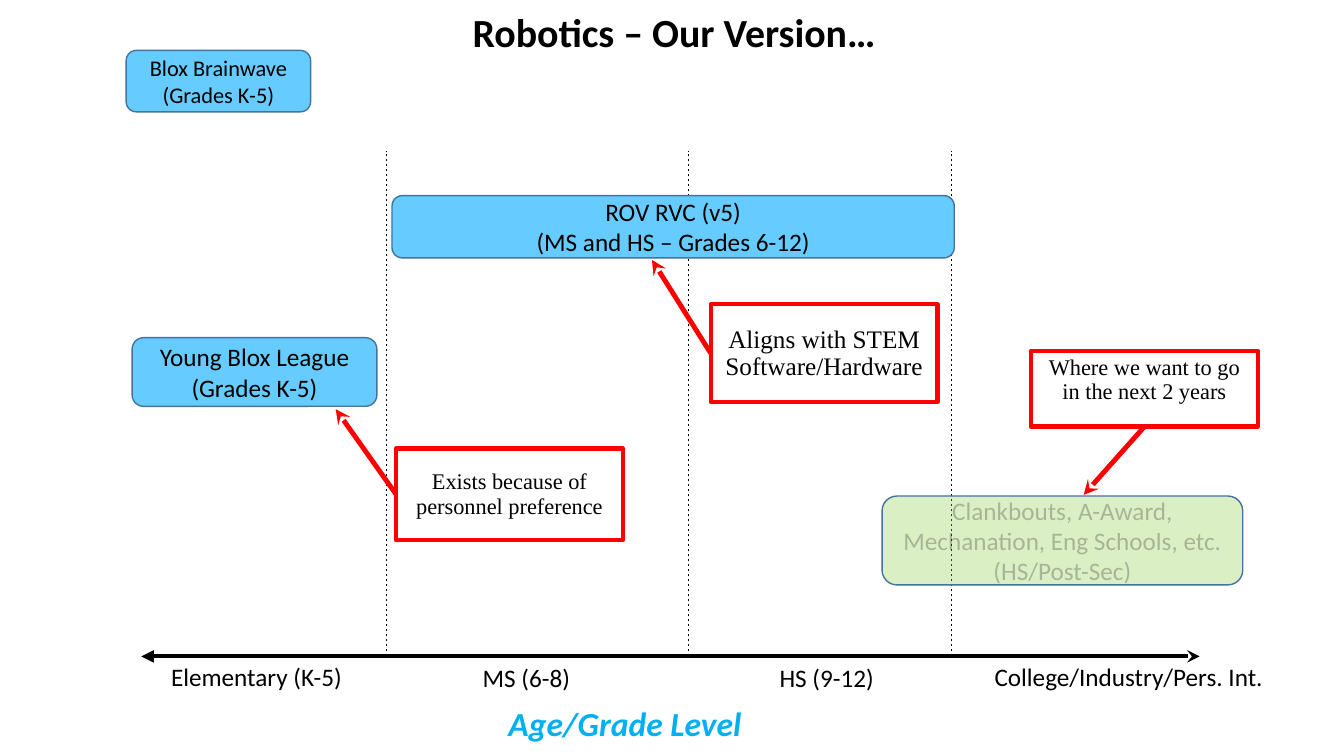
"""Build a slide placing robotics programs along an age and grade axis."""
from lxml.etree import SubElement
from pptx import Presentation
from pptx.dml.color import RGBColor
from pptx.enum.dml import MSO_LINE
from pptx.enum.shapes import MSO_CONNECTOR, MSO_SHAPE
from pptx.enum.text import MSO_ANCHOR as Anchor, PP_ALIGN
from pptx.oxml.ns import qn
from pptx.util import Cm, Pt

BLACK = RGBColor(0x00, 0x00, 0x00)
SKY = RGBColor(0x66, 0xCC, 0xFF)
GREEN = RGBColor(0x92, 0xD0, 0x50)
OUTLINE = RGBColor(0x43, 0x73, 0x9E)
RED = RGBColor(0xFF, 0x00, 0x00)
CYAN = RGBColor(0x00, 0xB0, 0xF0)


def write(shape, text, size, font="Calibri", color=BLACK, bold=False,
          italic=False, anchor=Anchor.TOP, spacing=1.0):
    """Put centred, formatted text in a shape."""
    frame = shape.text_frame
    frame.text = text
    frame.word_wrap = True
    frame.vertical_anchor = anchor
    for para in frame.paragraphs:
        para.alignment = PP_ALIGN.CENTER
        para.line_spacing = spacing
        for span in para.runs:
            span.font.name = font
            span.font.size = Pt(size)
            span.font.bold = bold
            span.font.italic = italic
            span.font.color.rgb = color


def draw_line(start, end, color, width, **arrowheads):
    """Draw a straight line with optional headEnd and tailEnd arrowheads."""
    line = page.shapes.add_connector(
        MSO_CONNECTOR.STRAIGHT, *map(Cm, start), *map(Cm, end))
    line.line.color.rgb = color
    line.line.width = Pt(width)
    for tag, kind in arrowheads.items():
        SubElement(line.line._get_or_add_ln(), qn(f"a:{tag}"), type=kind)
    SubElement(line._element.spPr, qn("a:effectLst"))
    return line


deck = Presentation()
deck.slide_width, deck.slide_height = Cm(33.87), Cm(19.05)
page = deck.slides.add_slide(deck.slide_layouts[6])

AXIS_TOP = 16.54
draw_line((3.56, AXIS_TOP), (30.23, AXIS_TOP), BLACK, 3,
          headEnd="triangle", tailEnd="stealth")
for left in (9.73, 17.35, 23.98):
    divider = draw_line((left, AXIS_TOP), (left, 3.81), BLACK, 0.5)
    divider.line.dash_style = MSO_LINE.DASH

stages = [
    ("Elementary (K-5)", 3.33, 16.54, 6.27),
    ("MS (6-8)", 10.13, 16.56, 6.27),
    ("HS (9-12)", 17.7, 16.56, 6.27),
    ("College/Industry/Pers. Int.", 24.71, 16.54, 7.47),
]
for text, left, top, width in stages:
    label = page.shapes.add_textbox(Cm(left), Cm(top), Cm(width), Cm(1.02))
    write(label, text, 18)

axis_title = page.shapes.add_textbox(Cm(11.84), Cm(17.58), Cm(7.82), Cm(1.27))
write(axis_title, "Age/Grade Level", 24, color=CYAN, bold=True, italic=True)
title = page.shapes.add_textbox(Cm(5.56), Cm(0.23), Cm(22.86), Cm(1.27))
write(title, "Robotics – Our Version…", 28.5, bold=True,
      anchor=Anchor.BOTTOM, spacing=0.7)

programs = [
    ("Blox Brainwave\n(Grades K-5)", 16, SKY, (3.18, 1.27, 4.65, 1.55)),
    ("ROV RVC (v5)\n(MS and HS – Grades 6-12)", 18, SKY,
     (9.88, 4.93, 14.17, 1.57)),
    ("Young Blox League\n(Grades K-5)", 18, SKY, (3.33, 8.51, 6.17, 1.73)),
    ("Clankbouts, A-Award, Mechanation, Eng Schools, etc.\n(HS/Post-Sec)",
     18, GREEN, (22.23, 12.5, 9.09, 2.24)),
]
for text, size, color, place in programs:
    program = page.shapes.add_shape(
        MSO_SHAPE.ROUNDED_RECTANGLE, *map(Cm, place))
    program.shadow.inherit = False
    program.fill.solid()
    program.fill.fore_color.rgb = color
    program.line.color.rgb = OUTLINE
    program.line.width = Pt(1)
    write(program, text, size, anchor=Anchor.MIDDLE)
    if color == GREEN:
        fill = program._element.spPr.find(qn("a:solidFill"))
        SubElement(fill[0], qn("a:alpha"), val="33000")
        for ink in program._element.txBody.iter(qn("a:srgbClr")):
            SubElement(ink, qn("a:alpha"), val="24000")

callouts = [
    ("Aligns with STEM Software/Hardware", 18, (17.91, 7.67, 5.72, 2.46),
     0.56, 1, (16.43, 6.55)),
    ("Exists because of personnel preference", 16, (9.98, 11.3, 5.72, 2.31),
     0.56, 1, (8.46, 10.31)),
    ("Where we want to go in the next 2 years", 16, (25.98, 8.84, 5.72, 1.91),
     0.13, 2, (27.31, 12.47)),
]
for text, size, place, inset, side, tip in callouts:
    callout = page.shapes.add_shape(MSO_SHAPE.RECTANGLE, *map(Cm, place))
    callout.shadow.inherit = False
    callout.fill.background()
    callout.line.color.rgb = RED
    callout.line.width = Pt(3)
    callout.text_frame.margin_top = Cm(inset)
    write(callout, text, size, font="Times New Roman", spacing=0.9)
    arrow = draw_line(place[:2], tip, RED, 3.5, tailEnd="stealth")
    arrow.begin_connect(callout, side)

deck.save("out.pptx")
